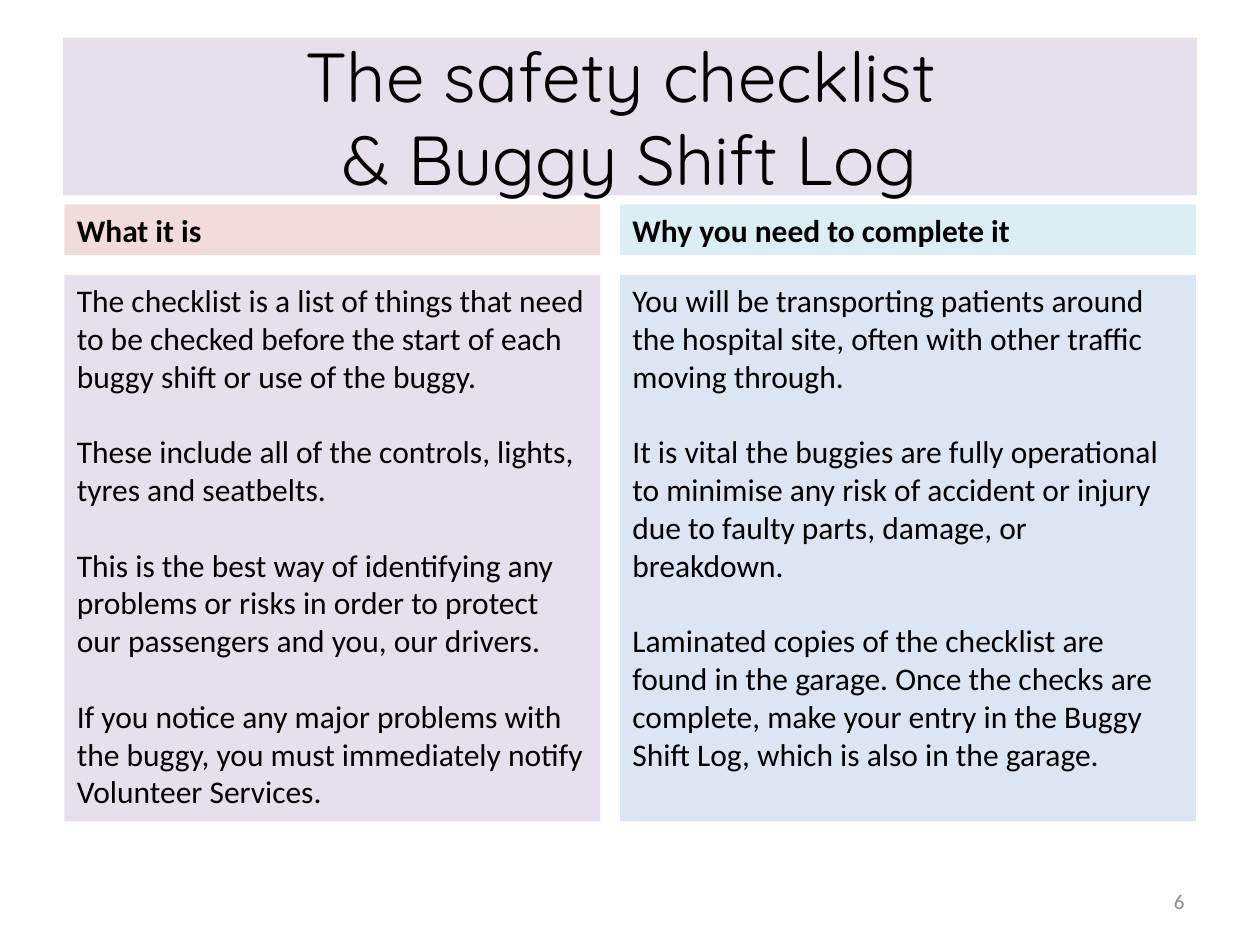
from pptx import Presentation
from pptx.dml.color import RGBColor
from pptx.enum.shapes import MSO_SHAPE
from pptx.enum.text import MSO_ANCHOR, PP_ALIGN
from pptx.util import Cm, Pt

RECTANGLE = MSO_SHAPE.RECTANGLE
TOP, MIDDLE = MSO_ANCHOR.TOP, MSO_ANCHOR.MIDDLE
LEFT, CENTER, RIGHT = PP_ALIGN.LEFT, PP_ALIGN.CENTER, PP_ALIGN.RIGHT

BLACK = "000000"
GREY = "8C8C8C"
LILAC = "E6E0EC"
ROSE = "F2DCDB"
AQUA = "DBEEF4"
PALE_BLUE = "DCE6F2"

HEADING_HEIGHT = 1.02
HEADING_GAP = 0.4
PARAGRAPH_GAP = 21.6

COLUMNS = [
    {
        "left": 1.3, "width": 10.8,
        "heading": "What it is", "heading_fill": ROSE, "body_fill": LILAC,
        "body": [
            "The checklist is a list of things that need to be checked before "
            "the start of each buggy shift or use of the buggy.",
            "These include all of the controls, lights, tyres and seatbelts.",
            "This is the best way of identifying any problems or risks in "
            "order to protect our passengers and you, our drivers.",
            "If you notice any major problems with the buggy, you must "
            "immediately notify Volunteer Services.",
        ],
    },
    {
        "left": 12.5, "width": 11.61,
        "heading": "Why you need to complete it",
        "heading_fill": AQUA, "body_fill": PALE_BLUE,
        "body": [
            "You will be transporting patients around the hospital site, "
            "often with other traffic moving through.",
            "It is vital the buggies are fully operational to minimise any "
            "risk of accident or injury due to faulty parts, damage, or "
            "breakdown.",
            "Laminated copies of the checklist are found in the garage. Once "
            "the checks are complete, make your entry in the Buggy Shift Log, "
            "which is also in the garage.",
        ],
    },
]


def rgb(color):
    return RGBColor.from_string(color)


def write_text(shape, paragraphs, size=18, font="Calibri", color=BLACK,
               bold=False, align=LEFT, anchor=TOP):
    text_frame = shape.text_frame
    text_frame.word_wrap = True
    text_frame.vertical_anchor = anchor
    text_frame.text = "\n".join(paragraphs)
    for index, paragraph in enumerate(text_frame.paragraphs):
        paragraph.alignment = align
        if index:
            paragraph.space_before = Pt(PARAGRAPH_GAP)
        for run in paragraph.runs:
            run.font.size = Pt(size)
            run.font.name = font
            run.font.bold = bold
            run.font.color.rgb = rgb(color)


def add_panel(slide, left, top, width, height, fill, paragraphs, **style):
    panel = slide.shapes.add_shape(
        RECTANGLE, Cm(left), Cm(top), Cm(width), Cm(height))
    panel.shadow.inherit = False
    panel.fill.solid()
    panel.fill.fore_color.rgb = rgb(fill)
    panel.line.fill.background()
    write_text(panel, paragraphs, **style)


def add_title(slide, left, top, width, height):
    add_panel(slide, left, top, width, height, LILAC,
              ["The safety checklist \v& Buggy Shift Log"],
              size=39.6, font="Quicksand", align=CENTER, anchor=MIDDLE)


def add_column(slide, column, top, height):
    """Place a heading bar with a body panel filling the rest of the height."""
    left, width = column["left"], column["width"]
    add_panel(slide, left, top, width, HEADING_HEIGHT,
              column["heading_fill"], [column["heading"]], bold=True)
    offset = HEADING_HEIGHT + HEADING_GAP
    add_panel(slide, left, top + offset, width, height - offset,
              column["body_fill"], column["body"])


def add_page_number(slide, left, top, width, height):
    box = slide.shapes.add_textbox(Cm(left), Cm(top), Cm(width), Cm(height))
    write_text(box, ["6"], size=12, color=GREY, align=RIGHT, anchor=MIDDLE)


def main():
    presentation = Presentation()
    presentation.slide_width = Cm(25.4)
    presentation.slide_height = Cm(19.05)
    slide = presentation.slides.add_slide(presentation.slide_layouts[6])

    add_title(slide, 1.27, 0.76, 22.86, 3.18)
    for column in COLUMNS:
        add_column(slide, column, top=4.12, height=12.44)
    add_page_number(slide, 18.2, 17.66, 5.93, 1.01)

    presentation.save("out.pptx")


if __name__ == "__main__":
    main()
